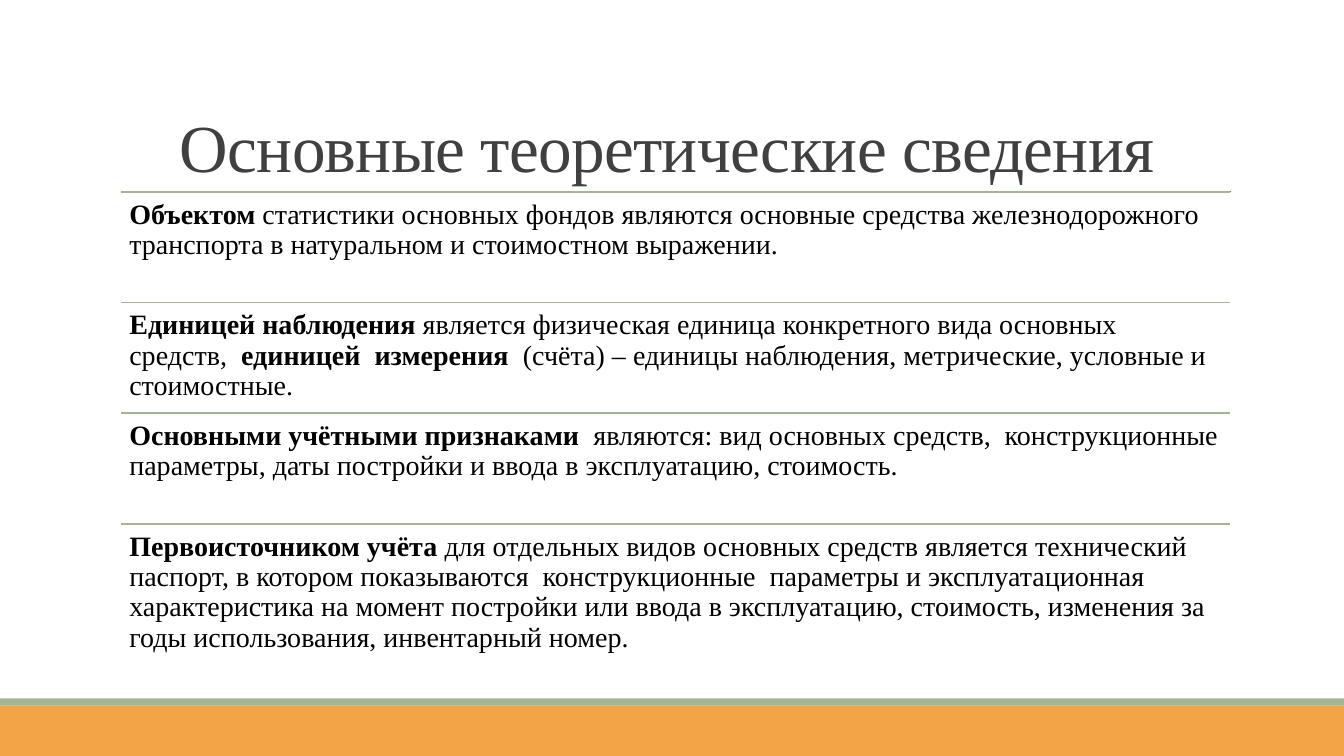
from lxml import etree
from pptx import Presentation
from pptx import util as u
from pptx.dml.color import RGBColor
from pptx.enum import shapes, text
from pptx.oxml.ns import qn

Cm, Pt = u.Cm, u.Pt

ORANGE = RGBColor(0xF3, 0xA4, 0x47)
GREEN = RGBColor(0xA5, 0xB5, 0x92)
GREY = RGBColor(0x80, 0x80, 0x80)
DARK = RGBColor(0x40, 0x40, 0x40)
BLACK = RGBColor(0, 0, 0)
FONT = "Times New Roman"

SLIDE_WIDTH, SLIDE_HEIGHT = Cm(33.87), Cm(19.05)
LEFT, WIDTH = Cm(3.05), Cm(27.94)
ROWS_TOP, ROW_HEIGHT = Cm(4.83), Cm(2.79)

# Each statement is a list of (words, bold) spans.
STATEMENTS = [
    [("Объектом ", True),
     ("статистики основных фондов являются основные средства железнодорожного "
      "транспорта в натуральном и стоимостном выражении.", False)],
    [("Единицей наблюдения", True),
     (" является физическая единица конкретного вида основных средств,  ", False),
     ("единицей  измерения", True),
     ("  (счёта) – единицы наблюдения, метрические, условные и стоимостные.", False)],
    [("Основными учётными признаками ", True),
     (" являются: вид основных средств,  конструкционные параметры, даты постройки "
      "и ввода в эксплуатацию, стоимость.", False)],
    [("Первоисточником учёта ", True),
     ("для отдельных видов основных средств является технический паспорт, в котором "
      "показываются  конструкционные  параметры и эксплуатационная характеристика "
      "на момент постройки или ввода в эксплуатацию, стоимость, изменения за годы "
      "использования, инвентарный номер.", False)],
]


def add_band(page, top, height, color):
    band = page.shapes.add_shape(
        shapes.MSO_SHAPE.RECTANGLE, 0, top, SLIDE_WIDTH, height)
    band.shadow.inherit = False
    band.fill.solid()
    band.fill.fore_color.rgb = color
    band.line.fill.background()


def add_rule(page, left, top, width, color, weight):
    rule = page.shapes.add_connector(
        shapes.MSO_CONNECTOR.STRAIGHT, left, top, left + width, top)
    rule.line.color.rgb = color
    rule.line.width = Pt(weight)
    etree.SubElement(rule._element.spPr, qn("a:effectLst"))


def add_paragraph_box(page, top, height, size, color, spacing):
    """Add a wrapped text box and return its frame and styled paragraph."""
    frame = page.shapes.add_textbox(LEFT, top, WIDTH, height).text_frame
    frame.word_wrap = True
    para = frame.paragraphs[0]
    para.line_spacing = spacing
    para.font.name = FONT
    para.font.size = Pt(size)
    para.font.color.rgb = color
    return frame, para


def add_title(page, words):
    top = Cm(0.79)
    frame, para = add_paragraph_box(page, top, ROWS_TOP - top, 48, DARK, 0.85)
    frame.vertical_anchor = text.MSO_ANCHOR.BOTTOM
    para.alignment = text.PP_ALIGN.CENTER
    span = para.add_run()
    span.text = words
    span.font._element.set("spc", "-50")


def add_statement(page, top, spans):
    add_rule(page, LEFT, top, WIDTH, GREEN, 1.25)
    frame, para = add_paragraph_box(page, top, ROW_HEIGHT, 20, BLACK, 0.9)
    frame.margin_left = frame.margin_right = Cm(0.21)
    frame.margin_top = frame.margin_bottom = Cm(0.21)
    for words, bold in spans:
        span = para.add_run()
        span.text = words
        span.font.bold = bold


def main():
    deck = Presentation()
    deck.slide_width, deck.slide_height = SLIDE_WIDTH, SLIDE_HEIGHT
    page = deck.slides.add_slide(deck.slide_layouts[6])

    add_band(page, Cm(17.78), Cm(1.27), ORANGE)
    add_band(page, Cm(17.6), Cm(0.18), GREEN)
    add_rule(page, Cm(3.33), ROWS_TOP, Cm(27.68), GREY, 0.5)
    add_title(page, "Основные теоретические сведения ")
    for row, spans in enumerate(STATEMENTS):
        add_statement(page, ROWS_TOP + row * ROW_HEIGHT, spans)

    deck.save("out.pptx")


if __name__ == "__main__":
    main()
